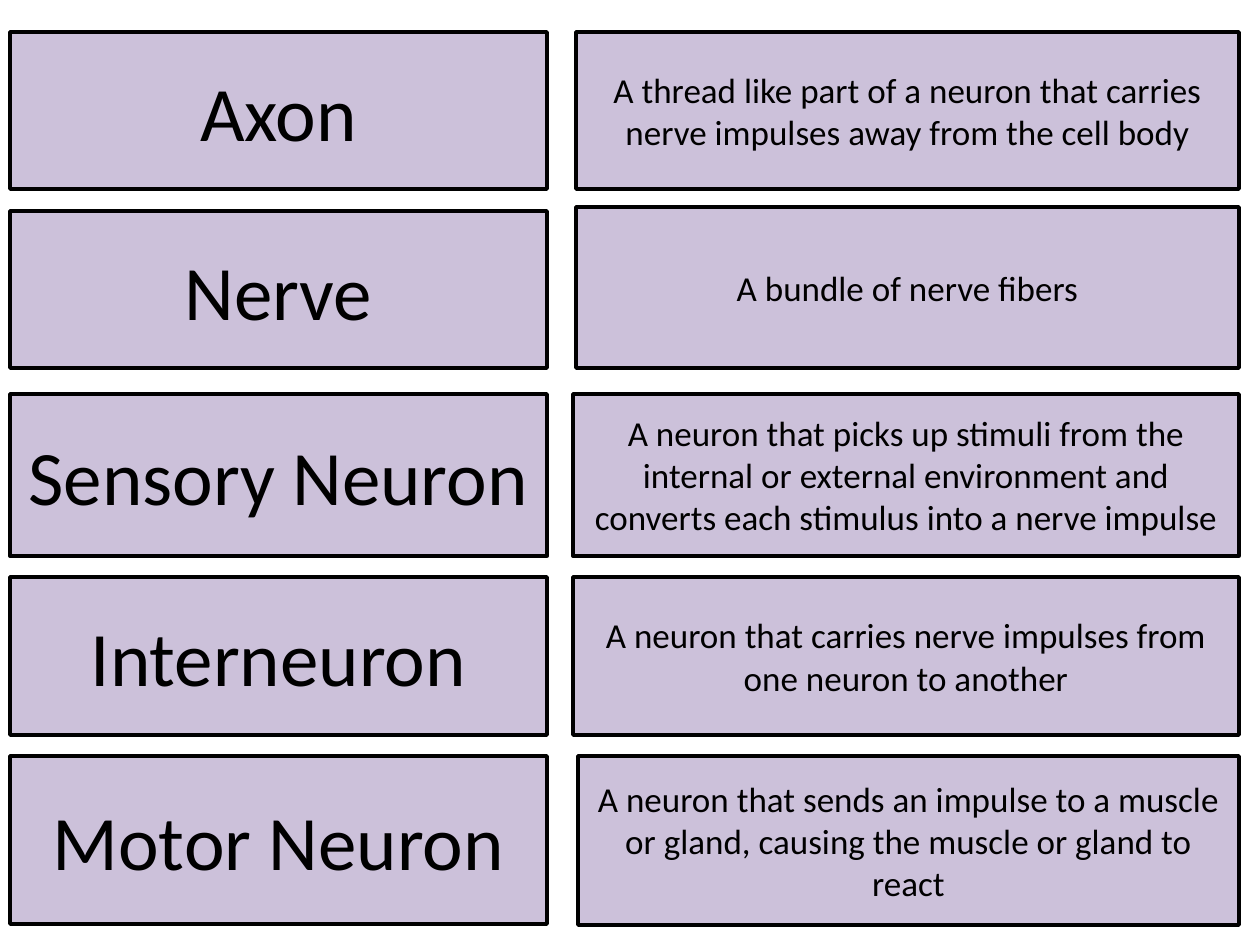
from pptx import Presentation
from pptx.dml.color import RGBColor
from pptx.enum.shapes import MSO_SHAPE as Shape
from pptx.enum.text import MSO_ANCHOR as Anchor, PP_ALIGN as Align
from pptx.util import Pt

PX = 914400 // 126
LILAC = RGBColor(0xCC, 0xC1, 0xDA)
BLACK = RGBColor(0, 0, 0)
FONT = "Calibri"

LEFT, TERM_W, RIGHT = 10, 537, 1239

# term, its top and height; meaning, its left, top and height
ROWS = [
    ("Axon", 32, 157,
     "A thread like part of a neuron that carries nerve impulses "
     "away from the cell body", 576, 32, 157),
    ("Nerve", 211, 157,
     "A bundle of nerve fibers", 576, 207, 161),
    ("Sensory Neuron", 394, 162,
     "A neuron that picks up stimuli from the internal or external "
     "environment and converts each stimulus into a nerve impulse",
     573, 394, 162),
    ("Interneuron", 577, 158,
     "A neuron that carries nerve impulses from one neuron to another",
     573, 577, 158),
    ("Motor Neuron", 756, 168,
     "A neuron that sends an impulse to a muscle or gland, causing "
     "the muscle or gland to react", 578, 756, 169),
]


def add_card(slide, box, text, size):
    card = slide.shapes.add_shape(Shape.FLOWCHART_PROCESS,
                                  *(n * PX for n in box))
    card.shadow.inherit = False
    card.fill.solid()
    card.fill.fore_color.rgb = LILAC
    card.line.color.rgb = BLACK
    card.line.width = Pt(2)

    # Centred label
    frame = card.text_frame
    frame.text = text
    frame.word_wrap = True
    frame.vertical_anchor = Anchor.MIDDLE
    par = frame.paragraphs[0]
    par.alignment = Align.CENTER
    font = par.runs[0].font
    font.name = FONT
    font.size = Pt(size)
    font.color.rgb = BLACK


def add_row(slide, term, top, high, sense, left, sense_top, sense_high):
    add_card(slide, (LEFT, top, TERM_W, high), term, 44)
    add_card(slide, (left, sense_top, RIGHT - left, sense_high), sense, 20)


def main():
    deck = Presentation()
    deck.slide_width = 1260 * PX
    deck.slide_height = 945 * PX
    slide = deck.slides.add_slide(deck.slide_layouts[6])
    for row in ROWS:
        add_row(slide, *row)
    deck.save("out.pptx")


if __name__ == "__main__":
    main()
